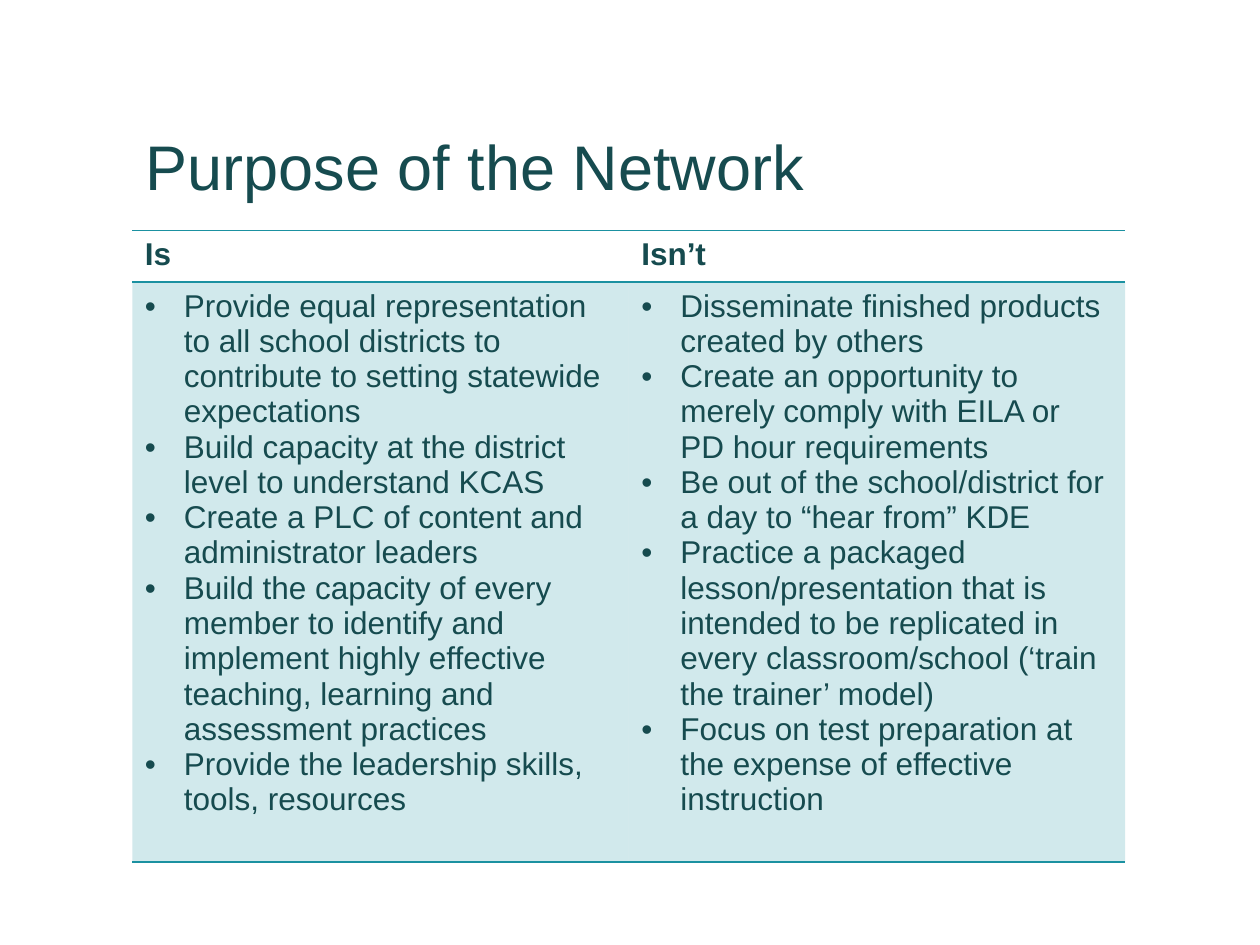
from dataclasses import dataclass

from pptx import Presentation
from pptx import util as u
from pptx.dml.color import RGBColor
from pptx.enum import text
from pptx.oxml import parse_xml
from pptx.oxml.ns import nsdecls, qn


@dataclass(frozen=True)
class Theme:
    font: str = "Arial"
    ink: str = "164B4F"
    accent: str = "1B91A1"
    paper: str = "FFFFFF"
    tint_percent: int = 20
    title_size: int = 36
    body_size: int = 18
    rule_width: int = 1
    indent: float = 0.31
    plain_table: str = "{2D5ABB26-0587-4C30-8999-92F81FD0307C}"


class SlideBuilder:
    def __init__(self, slide, theme):
        self.slide = slide
        self.theme = theme
        background = slide.background.fill
        background.solid()
        background.fore_color.rgb = RGBColor.from_string(theme.paper)

    def add_words(self, paragraph, wording, size, bold=False):
        run = paragraph.add_run()
        run.text = wording
        run.font.name = self.theme.font
        run.font.size = u.Pt(size)
        run.font.bold = bold
        run.font.color.rgb = RGBColor.from_string(self.theme.ink)

    def title(self, wording, left, top, width, height):
        box = self.slide.shapes.add_textbox(
            *map(u.Inches, (left, top, width, height)))
        frame = box.text_frame
        frame.word_wrap = True
        frame.vertical_anchor = text.MSO_ANCHOR.BOTTOM
        heading = frame.paragraphs[0]
        heading.line_spacing = 0.9
        self.add_words(heading, wording, self.theme.title_size)

    def bullet(self, paragraph):
        indent = u.Inches(self.theme.indent)
        properties = paragraph._p.get_or_add_pPr()
        properties.set("marL", str(indent))
        properties.set("indent", str(-indent))
        for item in (f'<a:buFont {nsdecls("a")} typeface="{self.theme.font}"/>',
                     f'<a:buChar {nsdecls("a")} char="•"/>'):
            properties.append(parse_xml(item))

    def rules(self, cell, *sides):
        """Draw cell borders; lines must come before the fill in the XML."""
        properties = cell._tc.get_or_add_tcPr()
        for position, side in enumerate(sides):
            properties.insert(position, parse_xml(
                f'<a:{side} {nsdecls("a")} w="{u.Pt(self.theme.rule_width)}">'
                f'<a:solidFill><a:srgbClr val="{self.theme.accent}"/></a:solidFill>'
                f'</a:{side}>'))

    def tint(self, cell):
        cell.fill.solid()
        cell.fill.fore_color.rgb = RGBColor.from_string(self.theme.accent)
        color = cell._tc.tcPr.find(f'{qn("a:solidFill")}/{qn("a:srgbClr")}')
        color.append(parse_xml(
            f'<a:alpha {nsdecls("a")} val="{self.theme.tint_percent * 1000}"/>'))

    def comparison(self, columns, left, top, width, row_heights):
        frame = self.slide.shapes.add_table(
            len(row_heights), len(columns),
            *map(u.Inches, (left, top, width, sum(row_heights))))
        table = frame.table
        table.first_row = table.horz_banding = False
        table._tbl.tblPr.find(qn("a:tableStyleId")).text = self.theme.plain_table
        for row, height in zip(table.rows, row_heights):
            row.height = u.Inches(height)

        for index, (heading, points) in enumerate(columns.items()):
            table.columns[index].width = u.Inches(width / len(columns))

            # Heading cell
            head = table.cell(0, index)
            head.fill.background()
            self.rules(head, "lnT", "lnB")
            self.add_words(head.text_frame.paragraphs[0], heading,
                           self.theme.body_size, bold=True)

            # Bulleted cell
            body = table.cell(1, index)
            self.tint(body)
            self.rules(body, "lnT", "lnB")
            for number, point in enumerate(points):
                lines = body.text_frame
                paragraph = lines.add_paragraph() if number else lines.paragraphs[0]
                self.bullet(paragraph)
                self.add_words(paragraph, point, self.theme.body_size)


PURPOSE = {
    "Is": [
        "Provide equal representation to all school districts to contribute "
        "to setting statewide expectations",
        "Build capacity at the district level to understand KCAS",
        "Create a PLC of content and administrator leaders",
        "Build the capacity of every member to identify and implement highly "
        "effective teaching, learning and assessment practices",
        "Provide the leadership skills, tools, resources",
    ],
    "Isn’t": [
        "Disseminate finished products created by others",
        "Create an opportunity to merely comply with EILA or PD hour requirements",
        "Be out of the school/district for a day to “hear from” KDE",
        "Practice a packaged lesson/presentation that is intended to be "
        "replicated in every classroom/school (‘train the trainer’ model)",
        "Focus on test preparation at the expense of effective instruction",
    ],
}


def main():
    deck = Presentation()
    deck.slide_width, deck.slide_height = u.Inches(10), u.Inches(7.5)
    builder = SlideBuilder(deck.slides.add_slide(deck.slide_layouts[6]), Theme())

    # Title
    builder.title("Purpose of the Network", 1.06, 0.42, 7.88, 1.25)

    # What the network is and isn't
    builder.comparison(PURPOSE, 1.05, 1.83, 7.88, row_heights=(0.41, 4.58))

    deck.save("out.pptx")


if __name__ == "__main__":
    main()
